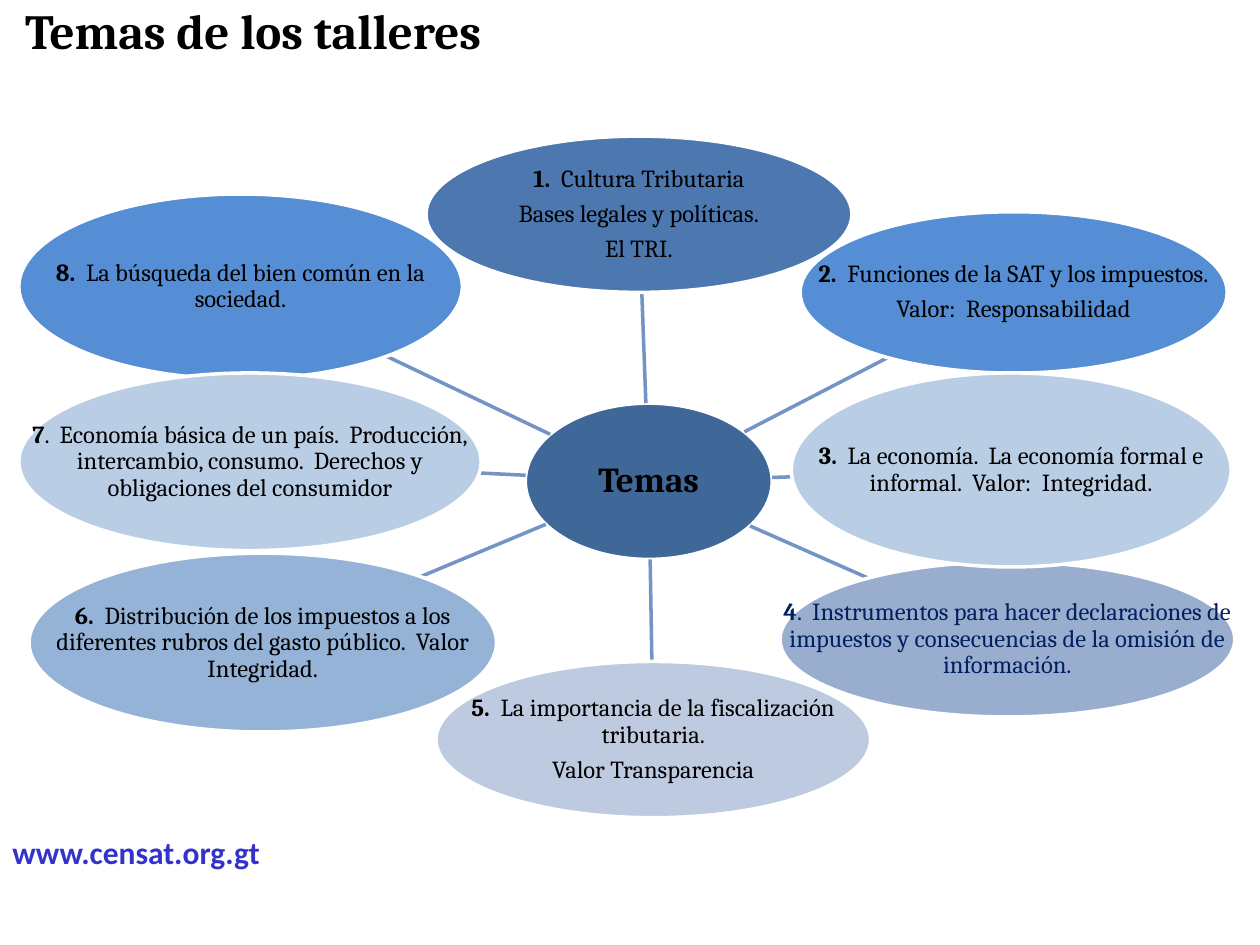
from math import hypot

from lxml import etree
from pptx import Presentation
from pptx.dml.color import RGBColor
from pptx.enum.shapes import MSO_CONNECTOR, MSO_SHAPE
from pptx.enum.text import MSO_ANCHOR, PP_ALIGN
from pptx.oxml.ns import qn
from pptx.util import Pt

OVAL = MSO_SHAPE.OVAL
LINE = MSO_CONNECTOR.STRAIGHT
TOP, MIDDLE = MSO_ANCHOR.TOP, MSO_ANCHOR.MIDDLE
LEFT, CENTER = PP_ALIGN.LEFT, PP_ALIGN.CENTER

HUB = (300.2, 230.4, 141.1, 89.3)
TOPICS = [
    ((10.8, 110.9, 253.4, 105.8), "558ED5", "000000",
     [("8.  ", "La búsqueda del bien común en la sociedad.")]),
    ((243.4, 77.8, 243.4, 89.3), "4D77AF", "000000",
     [("1.  ", "Cultura Tributaria"), ("", "Bases legales y políticas."),
      ("", "El TRI.")]),
    ((457.2, 121, 244.1, 92.2), "558ED5", "000000",
     [("2.  ", "Funciones de la SAT y los impuestos."),
      ("", "Valor:  Responsabilidad")]),
    ((445.7, 321.1, 259.9, 88.6), "99ADCE", "002060",
     [("4", ".  Instrumentos para hacer declaraciones de impuestos y "
       "consecuencias de la omisión de información.")]),
    ((249.1, 378, 248.4, 89.3), "BECADF", "000000",
     [("5.  ", "La importancia de la fiscalización tributaria."),
      ("", "Valor Transparencia")]),
    ((10.8, 213.1, 264.2, 101.5), "B9CDE5", "000000",
     [("7", ".  Economía básica de un país.  Producción, intercambio, "
       "consumo.  Derechos y obligaciones del consumidor")]),
    ((452.2, 213.1, 251.3, 110.9), "B9CDE5", "000000",
     [("3.  ", "La economía.  La economía formal e informal.  "
       "Valor:  Integridad.")]),
    ((16.6, 316.1, 267.1, 102.2), "95B3D7", "000000",
     [("6.  ", "Distribución de los impuestos a los diferentes rubros del "
       "gasto público.  Valor Integridad.")]),
]


def color(code):
    """Turn a hex string into a colour."""
    return RGBColor.from_string(code)


def write(slide, box, paras, size, ink="000000", face="Cambria",
          align=LEFT, anchor=TOP, pad=(0, 0), lead=1.0, after=0):
    """Write paragraphs, each a pair of bold and plain text, into a box."""
    frame = slide.shapes.add_textbox(*map(Pt, box)).text_frame
    frame.word_wrap = True
    frame.vertical_anchor = anchor
    frame.margin_left = frame.margin_right = Pt(pad[0])
    frame.margin_top = frame.margin_bottom = Pt(pad[1])
    for i, pair in enumerate(paras):
        para = frame.paragraphs[0] if i == 0 else frame.add_paragraph()
        para.alignment = align
        para.line_spacing = lead
        para.space_after = Pt(after)
        for text, bold in zip(pair, (True, False)):
            if text:
                run = para.add_run()
                run.text = text
                run.font.name = face
                run.font.size = Pt(size)
                run.font.bold = bold
                run.font.color.rgb = color(ink)


def bubble(slide, box, fill, paras, size=14, ink="000000"):
    """Place a white-edged ellipse with centred text across its box."""
    oval = slide.shapes.add_shape(OVAL, *map(Pt, box))
    oval.shadow.inherit = False
    oval.fill.solid()
    oval.fill.fore_color.rgb = color(fill)
    oval.line.color.rgb = color("FFFFFF")
    oval.line.width = Pt(2)
    write(slide, box, paras, size, ink, align=CENTER, anchor=MIDDLE,
          pad=(0.7, 0.7), lead=0.9, after=size * 0.35)


def middle(box):
    """Return the centre of a box."""
    x, y, w, h = box
    return x + w / 2, y + h / 2


def edge(box, goal):
    """Return the point where the ellipse in a box faces the goal."""
    x, y = middle(box)
    dx, dy = goal[0] - x, goal[1] - y
    part = 1 / hypot(dx / (box[2] / 2), dy / (box[3] / 2))
    return x + dx * part, y + dy * part


def link(slide, start, end):
    """Join two ellipses along the line between their centres."""
    ends = edge(start, middle(end)) + edge(end, middle(start))
    line = slide.shapes.add_connector(LINE, *map(Pt, ends))
    line.line.color.rgb = color("7394C5")
    line.line.width = Pt(2)
    etree.SubElement(line._element.spPr, qn("a:effectLst"))


def wheel(slide):
    """Draw the hub and its linked topics."""
    bubble(slide, HUB, "3F6797", [("Temas", "")], size=20)
    for box, fill, ink, paras in TOPICS:
        link(slide, HUB, box)
        bubble(slide, box, fill, paras, ink=ink)


def main():
    """Build and save the slide."""
    deck = Presentation()
    deck.slide_width, deck.slide_height = Pt(720), Pt(540)
    slide = deck.slides.add_slide(deck.slide_layouts[6])
    wheel(slide)
    write(slide, (14.4, 0, 493.2, 102.2), [("Temas de los talleres", "")], 28)
    write(slide, (0, 472.3, 298, 28.8), [("www.censat.org.gt", "")], 18,
          ink="3333CC", face="Calibri", pad=(7.2, 3.6))
    deck.save("out.pptx")


if __name__ == "__main__":
    main()
